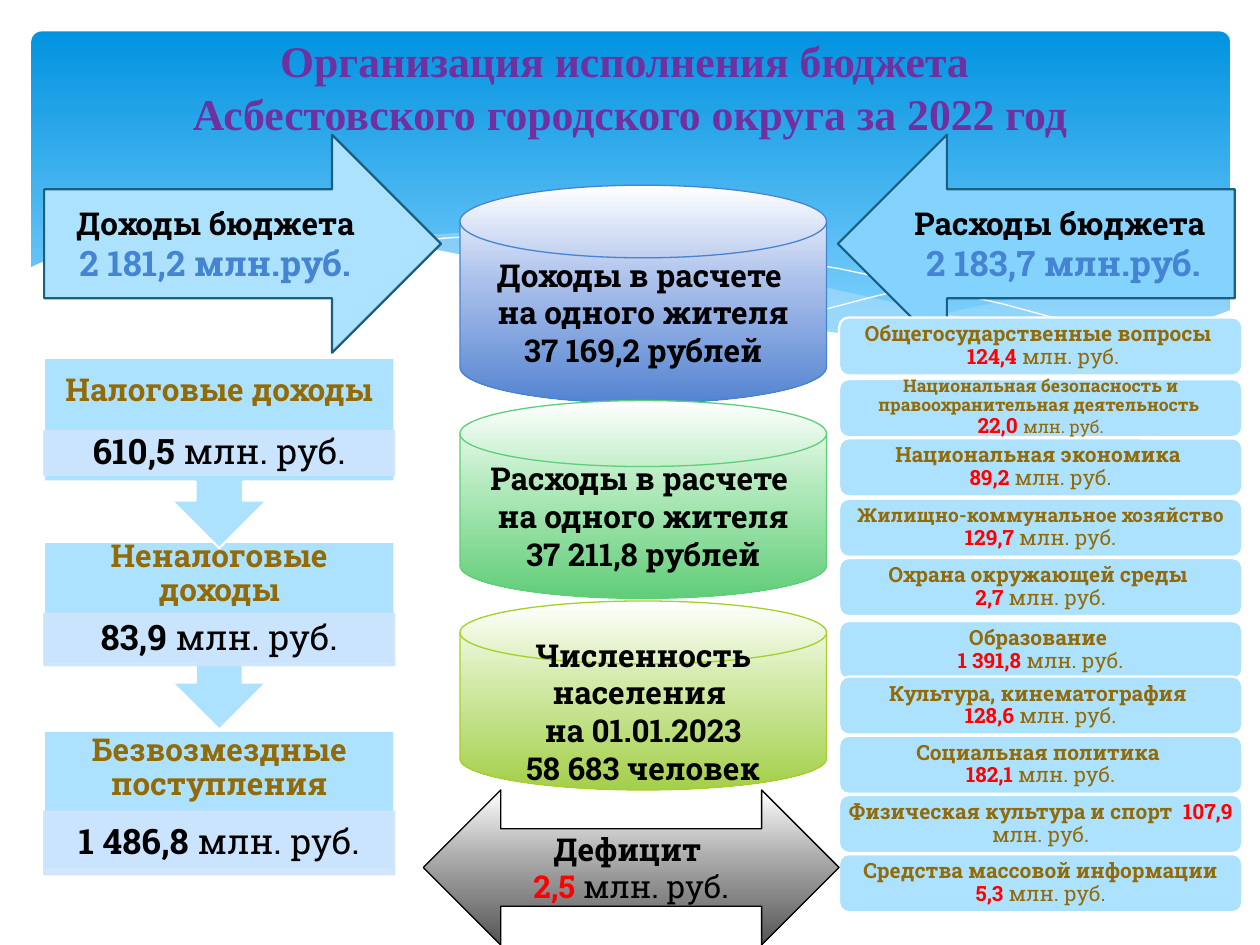
from dataclasses import dataclass

from lxml.etree import SubElement
from pptx import Presentation
from pptx.dml.color import RGBColor
from pptx.enum.shapes import MSO_SHAPE as SHAPE
from pptx.enum.text import MSO_ANCHOR, PP_ALIGN
from pptx.oxml.ns import qn
from pptx.util import Pt

PX = 9144  # 100 px to the inch


@dataclass(frozen=True)
class Theme:
    body: str = "Roboto Slab"
    serif: str = "Times New Roman"
    black: str = "000000"
    white: str = "FFFFFF"
    red: str = "FF0000"
    gold: str = "936A08"
    blue: str = "4584D3"
    purple: str = "7030A0"
    pale: str = "ADE2FE"
    sky: str = "83D3FE"
    mist: str = "CEE5FE"
    wave: str = "C6E7FC"
    edge: str = "195F84"
    title: int = 25
    big: int = 20
    head: int = 18
    small: int = 12


T = Theme()

# Content
TITLE = "Организация исполнения бюджета \nАсбестовского городского округа за 2022 год"
UNIT = "млн. руб."
# top, height, lines, middle stop, last stop, outline
DISKS = [
    (147, 173, ["Доходы в расчете ", "на одного жителя", "37 169,2 рублей"],
     "ABC0EB", "5484D1", T.blue),
    (477, 150, ["Численность населения \nна 01.01.2023", "58 683 человек"],
     "D1EAA7", "A4CF4A", "A5D028"),
    (318, 157, ["Расходы в расчете \nна одного жителя", "37 211,8 рублей"],
     "B1E9BB", "61CD78", "5BD078"),
]
# left, preset, fill, heading, amount
ARROWS = [
    (35, SHAPE.RIGHT_ARROW, T.pale, "Доходы бюджета", "2 181,2 млн.руб."),
    (665, SHAPE.LEFT_ARROW, T.sky, "Расходы бюджета ", "2 183,7 млн.руб."),
]
# preset, top, height, heading height, amount top, amount height, heading, amount
INCOME = [
    (SHAPE.RECTANGLE, 580, 110, 60, 644, 50, "Безвозмездные поступления", "1 486,8"),
    (SHAPE.UP_ARROW_CALLOUT, 430, 149, 52, 487, 41, "Неналоговые доходы", "83,9"),
    (SHAPE.UP_ARROW_CALLOUT, 284, 151, 53, 342, 35, "Налоговые доходы", "610,5"),
]
# top, name, amount, name size, unit size
SPENDING = [
    (252, "Общегосударственные вопросы \n ", "124,4 ", 12, 12),
    (301, "Национальная безопасность и правоохранительная деятельность \n", "22,0 ", 10, 10),
    (348, "Национальная экономика \n", "89,2 ", 12, 12),
    (396, "Жилищно-коммунальное хозяйство ", "129,7 ", 11, 12),
    (443, "Охрана окружающей среды \n", "2,7 ", 12, 12),
    (493, "Образование \n", "1 391,8 ", 12, 12),
    (537, "Культура, кинематография \n", "128,6 ", 12, 12),
    (584, "Социальная политика \n", "182,1 ", 12, 12),
    (631, "Физическая культура и спорт  ", "107,9 ", 12, 12),
    (678, "Средства массовой информации ", "5,3 ", 12, 12),
]

# Background waves: fill, opacity in percent, outline points
WAVES = [
    (T.wave, 29, [
        (975, 200), (948, 204), (921, 210), (891, 216), (861, 223), (805, 237), (753, 248),
        (706, 257), (661, 265), (691, 269), (719, 272), (745, 275), (769, 277), (803, 278),
        (835, 277), (863, 275), (889, 272), (913, 267), (935, 262), (963, 252), (976, 247),
        (976, 200)]),
    (T.wave, 40, [
        (893, 273), (866, 269), (807, 260), (741, 247), (668, 231), (629, 222), (598, 214),
        (569, 208), (541, 203), (514, 198), (489, 194), (442, 189), (399, 186), (361, 185),
        (328, 187), (299, 189), (286, 191), (323, 196), (362, 203), (404, 211), (449, 222),
        (491, 232), (530, 240), (566, 248), (601, 255), (634, 261), (665, 266), (695, 270),
        (736, 275), (773, 277), (807, 278), (838, 278), (867, 276)]),
    (None, 100, [
        (309, 195), (328, 192), (353, 189), (387, 187), (433, 187), (469, 189), (510, 192),
        (556, 197), (608, 204), (665, 213), (727, 226), (795, 241), (869, 261), (907, 272)]),
    (None, 100, [
        (613, 257), (653, 246), (695, 235), (748, 223), (806, 210), (866, 199), (895, 194),
        (924, 190), (951, 187), (975, 185)]),
    (T.white, 100, [
        (977, 246), (950, 256), (920, 265), (887, 271), (850, 275), (809, 277), (761, 275),
        (708, 270), (648, 262), (603, 254), (555, 245), (503, 233), (447, 220), (391, 207),
        (340, 197), (292, 190), (250, 186), (211, 184), (177, 184), (146, 185), (119, 187),
        (95, 191), (76, 195), (59, 199), (46, 203), (36, 207), (29, 210), (23, 213),
        (23, 329), (977, 329)]),
]


def set_alpha(paint, percent):
    if percent < 100:
        color = paint.find(qn("a:solidFill")).find(qn("a:srgbClr"))
        SubElement(color, qn("a:alpha"), val=str(percent * 1000))


def paint(s, fill=None, line=None, width=1.25, alpha=100, line_alpha=100):
    """Fill is a colour, a list of (percent, colour) stops, or None."""
    s.shadow.inherit = False
    props = s._element.spPr
    if fill is None:
        s.fill.background()
    elif isinstance(fill, list):
        s.fill.gradient()
        s.fill.gradient_angle = 270
        stops = props.find(qn("a:gradFill")).find(qn("a:gsLst"))
        for old in list(stops):
            stops.remove(old)
        for position, color in fill:
            stop = SubElement(stops, qn("a:gs"), pos=str(position * 1000))
            SubElement(stop, qn("a:srgbClr"), val=color)
    else:
        s.fill.solid()
        s.fill.fore_color.rgb = RGBColor.from_string(fill)
        set_alpha(props, alpha)
    if line is None:
        s.line.fill.background()
    else:
        s.line.color.rgb = RGBColor.from_string(line)
        s.line.width = Pt(width)
        set_alpha(props.find(qn("a:ln")), line_alpha)


def write(s, paragraphs, insets=(10, 5), spacing=None, font=T.body):
    """Each paragraph is a list of (text, size, colour, bold) runs."""
    tf = s.text_frame
    tf.word_wrap = True
    tf.vertical_anchor = MSO_ANCHOR.MIDDLE
    tf.margin_left = tf.margin_right = insets[0] * PX
    tf.margin_top = tf.margin_bottom = insets[1] * PX
    for i, runs in enumerate(paragraphs):
        p = tf.add_paragraph() if i else tf.paragraphs[0]
        p.alignment = PP_ALIGN.CENTER
        if spacing:
            p.line_spacing = spacing
        for text, size, color, bold in runs:
            for j, part in enumerate(text.split("\n")):
                if j:
                    p.add_line_break()
                if part:
                    r = p.add_run()
                    r.text = part
                    r.font.name, r.font.size, r.font.bold = font, Pt(size), bold
                    r.font.color.rgb = RGBColor.from_string(color)


prs = Presentation()
prs.slide_width, prs.slide_height = 1000 * PX, 750 * PX
shapes = prs.slides.add_slide(prs.slide_layouts[6]).shapes


def add(preset, *box):
    return shapes.add_shape(preset, *(v * PX for v in box))


def add_text(*box):
    return shapes.add_textbox(*(v * PX for v in box))


# Sky panel and waves
panel = add(SHAPE.ROUNDED_RECTANGLE, 25, 25, 951, 270)
panel.adjustments[0] = 0.03
paint(panel, [(0, "0293E0"), (90, T.sky)])
for fill, alpha, points in WAVES:
    builder = shapes.build_freeform(*points[0], scale=PX)
    builder.add_line_segments(points[1:], close=fill is not None)
    paint(builder.convert_to_shape(), fill, None if fill else T.white, 0, alpha)

# Title
write(add_text(50, 30, 900, 77), [[(TITLE, T.title, T.purple, True)]], font=T.serif)

# Per-resident disks
for top, height, lines, middle, last, outline in DISKS:
    s = add(SHAPE.FLOWCHART_MAGNETIC_DISK, 365, top, 291, height)
    paint(s, [(0, T.white), (44, middle), (100, last)], outline, 0.75)
    write(s, [[(text, T.head, T.black, True)] for text in lines])

# Budget total arrows
for left, preset, fill, heading, amount in ARROWS:
    s = add(preset, left, 107, 315, 173)
    paint(s, fill, T.edge)
    write(s, [[(heading, T.head, T.black, True)], [(amount, T.big, T.blue, True)]])

# Income chain
for preset, top, height, head_height, amount_top, amount_height, heading, amount in INCOME:
    s = add(preset, 35, top, 278, height)
    paint(s, T.pale, T.white)
    if preset == SHAPE.UP_ARROW_CALLOUT:
        s.rotation = 180
    write(add_text(35, top, 278, head_height), [[(heading, T.head, T.gold, True)]],
          (14, 14), 0.9)
    s = add(SHAPE.RECTANGLE, 35, amount_top, 278, amount_height)
    paint(s, T.mist, T.mist, alpha=90, line_alpha=90)
    write(s, [[(amount, T.big, T.black, True), (" " + UNIT, T.big, T.black, False)]],
          (16, 3), 0.9)

# Spending cards
for top, name, amount, name_size, unit_size in SPENDING:
    s = add(SHAPE.ROUNDED_RECTANGLE, 666, top, 320, 46)
    paint(s, T.pale, T.white)
    write(s, [[(name, name_size, T.gold, True), (amount, T.small, T.red, True),
               (UNIT, unit_size, T.gold, False)]], (5, 5), 0.9)

# Deficit
s = add(SHAPE.LEFT_RIGHT_ARROW, 336, 627, 330, 123)
paint(s, [(0, T.white), (44, "ABABAB"), (100, "545454")], T.black, 0.75)
write(s, [[("Дефицит \n", T.head, T.black, True), ("2,5", T.head, T.red, True),
           (" " + UNIT, T.head, T.black, False)]])

prs.save("out.pptx")
